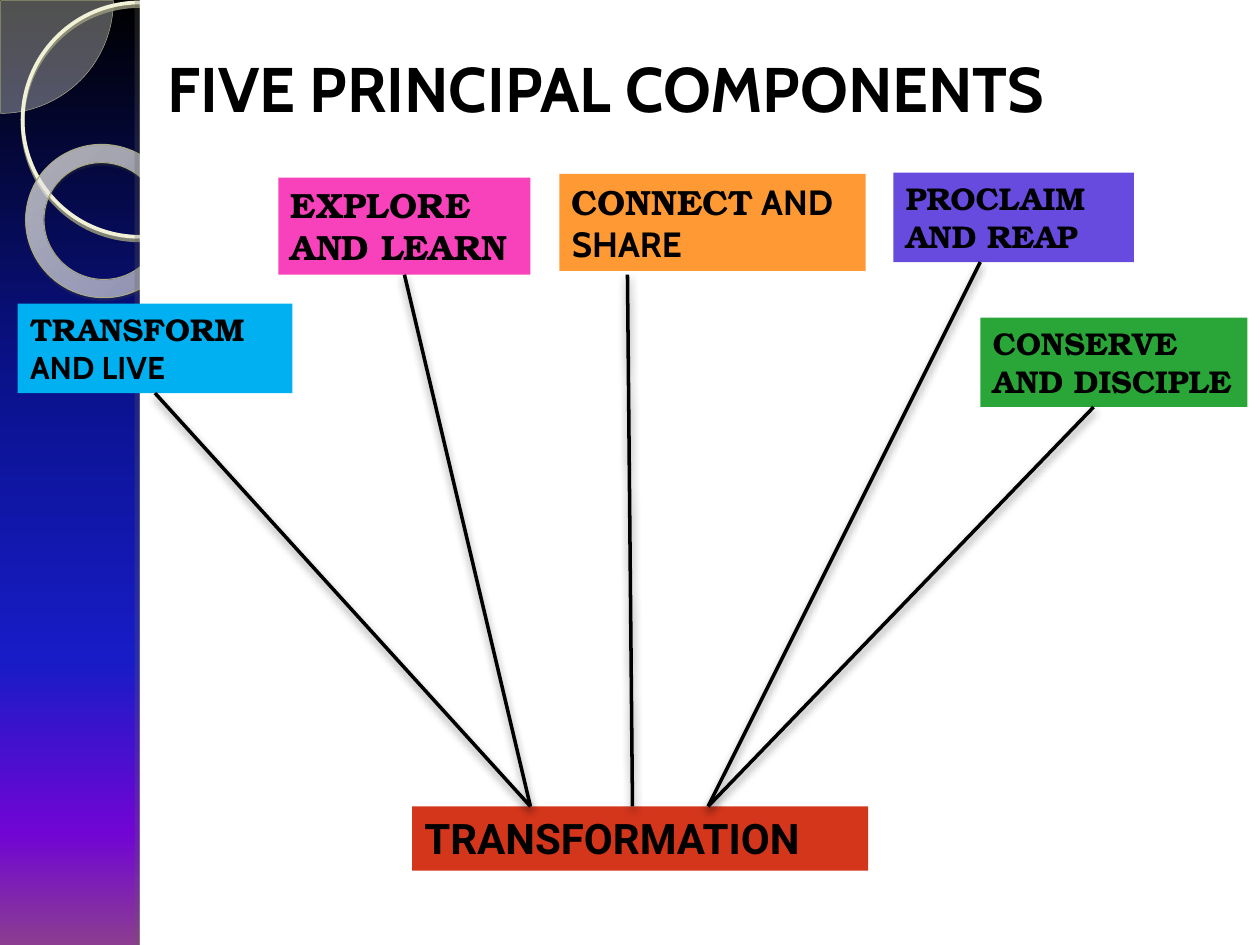
import dataclasses
import typing

import pptx
import pptx.dml.color
import pptx.enum.shapes
import pptx.enum.text
import pptx.oxml
import pptx.oxml.ns
import pptx.util

RGB = pptx.dml.color.RGBColor
KIND = pptx.enum.shapes.MSO_SHAPE
BLACK, WHITE = RGB(0, 0, 0), RGB(255, 255, 255)
NAVY, BLUE = RGB(0x0A, 0x12, 0x8C), RGB(0x18, 0x1C, 0xC7)
VIOLET, PLUM = RGB(0x70, 0x05, 0xD4), RGB(0x8C, 0x3D, 0x91)
PALE, KHAKI = RGB(0xF8, 0xF8, 0xF2), RGB(0xB5, 0xB5, 0x8E)
CREAM, OLIVE = RGB(0xF1, 0xF1, 0xD7), RGB(0x97, 0x97, 0x7D)
IVORY, MILK = RGB(0xFB, 0xFB, 0xF5), RGB(0xFE, 0xFE, 0xFA)
SAND, MOSS = RGB(0xCC, 0xCC, 0x81), RGB(0xAB, 0xAB, 0x83)
DARK, SHADE = RGB(0x4E, 0x4E, 0x3D), RGB(0x60, 0x60, 0x53)
SKY, PINK = RGB(0x00, 0xB0, 0xF0), RGB(0xF8, 0x42, 0xBB)
AMBER, IRIS = RGB(0xFF, 0x99, 0x33), RGB(0x67, 0x4B, 0xDF)
GREEN, RED = RGB(0x2A, 0xA6, 0x39), RGB(0xD4, 0x36, 0x1C)
SANS, SERIF, BASE = "Cabin", "TeX Gyre Bonum", "Roboto"

# The slide is a grid of 100 columns and 75 rows
WIDE, HIGH = pptx.util.Inches(10), pptx.util.Inches(7.5)
COLS, ROWS = 100, 75

Point = tuple[float, float]
Area = tuple[float, float, float, float]
Stop = tuple[int, RGB, int]


@dataclasses.dataclass
class Shadow:
    color: RGB
    alpha: int
    blur: float
    dist: float
    angle: int


@dataclasses.dataclass
class Box:
    area: Area
    fill: RGB
    size: int
    runs: list[tuple[str, str]]
    start: typing.Optional[Point] = None
    end: typing.Optional[Point] = None


def place(col: float, row: float) -> tuple[int, int]:
    return round(WIDE * col / COLS), round(HIGH * row / ROWS)


def tint(color: RGB, alpha: int) -> str:
    return f'<a:srgbClr val="{color}"><a:alpha val="{alpha * 1000}"/></a:srgbClr>'


def node(text: str):
    """Build an element; text starts with the bare tag name."""
    return pptx.oxml.parse_xml(text.replace(">", f" {pptx.oxml.ns.nsdecls('a')}>", 1))


def blend(props, stops: list[Stop], course: str) -> None:
    """Put a gradient in the place of a solid fill."""
    parts = "".join(f'<a:gs pos="{pos * 1000}">{tint(color, alpha)}</a:gs>'
                    for pos, color, alpha in stops)
    old = props.find(pptx.oxml.ns.qn("a:solidFill"))
    props.replace(old, node(f"<a:gradFill><a:gsLst>{parts}</a:gsLst>{course}</a:gradFill>"))


def cast(item, shadow: Shadow) -> None:
    props = item._element.spPr
    old = props.find(pptx.oxml.ns.qn("a:effectLst"))
    if old is not None:
        props.remove(old)
    blur, dist = pptx.util.Pt(shadow.blur), pptx.util.Pt(shadow.dist)
    props.append(node(
        f'<a:effectLst><a:outerShdw blurRad="{blur}" dist="{dist}" '
        f'dir="{shadow.angle * 60000}" algn="tl" rotWithShape="0">'
        f"{tint(shadow.color, shadow.alpha)}</a:outerShdw></a:effectLst>"))


def draw(slide, kind, area: Area, fill: typing.Optional[RGB] = None,
         line: typing.Optional[tuple[RGB, float]] = None,
         shadow: typing.Optional[Shadow] = None):
    shape = slide.shapes.add_shape(kind, *place(*area[:2]), *place(*area[2:]))
    shape.shadow.inherit = False
    if fill is None:
        shape.fill.background()
    else:
        shape.fill.solid()
        shape.fill.fore_color.rgb = fill
    if line is None:
        shape.line.fill.background()
    else:
        shape.line.color.rgb, shape.line.width = line[0], pptx.util.Pt(line[1])
    if shadow:
        cast(shape, shadow)
    return shape


def style(run, face: str, size: int) -> None:
    font = run.font
    font.name, font.size, font.bold = face, pptx.util.Pt(size), True
    font.color.rgb = BLACK


def label(slide, box: Box) -> None:
    frame = draw(slide, KIND.RECTANGLE, box.area, box.fill).text_frame
    frame.word_wrap = True
    frame.vertical_anchor = pptx.enum.text.MSO_ANCHOR.TOP
    para = frame.paragraphs[0]
    para.alignment = pptx.enum.text.PP_ALIGN.LEFT
    for text, face in box.runs:
        run = para.add_run()
        run.text = text
        style(run, face, box.size)


def link(slide, start: Point, end: Point) -> None:
    line = slide.shapes.add_connector(
        pptx.enum.shapes.MSO_CONNECTOR.STRAIGHT, *place(*start), *place(*end))
    line.line.color.rgb, line.line.width = BLACK, pptx.util.Pt(2)
    cast(line, Shadow(BLACK, 43, 5, 2.1, 90))


def adorn(slide) -> None:
    """Side band with its circles, and the white page."""
    slide.background.fill.solid()
    blend(slide._element.cSld.bg.bgPr,
          [(0, BLACK, 100), (40, NAVY, 100), (70, BLUE, 100),
           (88, VIOLET, 100), (100, PLUM, 100)],
          '<a:lin ang="5400000" scaled="0"/>')

    pie = draw(slide, KIND.PIE, (-8.9, -8.9, 17.9, 17.9), PALE, (KHAKI, 0.25))
    pie.adjustments[0], pie.adjustments[1] = 0, 54
    blend(pie._element.spPr, [(0, PALE, 33), (100, PALE, 33)], '<a:lin ang="0"/>')

    draw(slide, KIND.OVAL, (1.8, 0.2, 18.6, 18.6), None, (CREAM, 2.15),
         Shadow(OLIVE, 85, 0, 2, 90))

    ring = draw(slide, KIND.DONUT, (2, 11.5, 12.3, 12.1), IVORY, (MOSS, 0.58),
                Shadow(DARK, 35, 1, 1.2, 75))
    ring.rotation, ring.adjustments[0] = 38.6, 0.12
    blend(ring._element.spPr, [(0, IVORY, 70), (70, MILK, 55), (100, SAND, 60)],
          '<a:path path="circle"><a:fillToRect l="-408000" t="-50000" '
          'r="508000" b="150000"/></a:path>')

    draw(slide, KIND.RECTANGLE, (11.1, 0, 88.9, ROWS), WHITE)
    draw(slide, KIND.RECTANGLE, (11.1, 0, 0.8, ROWS), WHITE,
         shadow=Shadow(SHADE, 25, 0, 3, 180))


def head(slide, text: str) -> None:
    title = slide.shapes.title
    title.left, title.top = place(12.3, 0.7)
    title.width, title.height = place(84.4, 12.5)
    frame = title.text_frame
    frame.text = text
    frame.vertical_anchor = pptx.enum.text.MSO_ANCHOR.MIDDLE
    frame.paragraphs[0].alignment = pptx.enum.text.PP_ALIGN.LEFT
    style(frame.paragraphs[0].runs[0], SANS, 36)
    # Bring the title in front of the side band
    slide.shapes._spTree.append(title._element)


def main() -> None:
    deck = pptx.Presentation()
    deck.slide_width, deck.slide_height = WIDE, HIGH
    slide = deck.slides.add_slide(deck.slide_layouts[5])
    adorn(slide)
    head(slide, "FIVE PRINCIPAL COMPONENTS")

    # Five parts above, their common base below
    left, mid, right = (42.1, 64), (50.2, 64), (56.2, 64)
    boxes = [
        Box((1.4, 24.1, 21.8, 7.1), SKY, 18,
            [("TRANSFORM", SERIF), (" AND LIVE", SANS)], (12.3, 31.2), left),
        Box((22.1, 14.1, 20, 7.7), PINK, 20,
            [("EXPLORE AND LEARN", SERIF)], (32.1, 21.8), left),
        Box((44.4, 13.8, 24.3, 7.7), AMBER, 20,
            [("CONNECT", SERIF), (" AND SHARE", SANS)], (49.8, 21.8), mid),
        Box((70.9, 13.7, 19.1, 7.1), IRIS, 18,
            [("PROCLAIM AND REAP", SERIF)], (77.8, 20.8), right),
        Box((77.8, 25.2, 21.2, 7.1), GREEN, 18,
            [("CONSERVE AND DISCIPLE", SERIF)], (86.8, 32.3), right),
        Box((32.7, 64, 36.2, 5.1), RED, 24, [("TRANSFORMATION", BASE)]),
    ]
    for box in boxes:
        label(slide, box)
    for box in boxes:
        if box.start and box.end:
            link(slide, box.start, box.end)
    deck.save("out.pptx")


if __name__ == "__main__":
    main()
